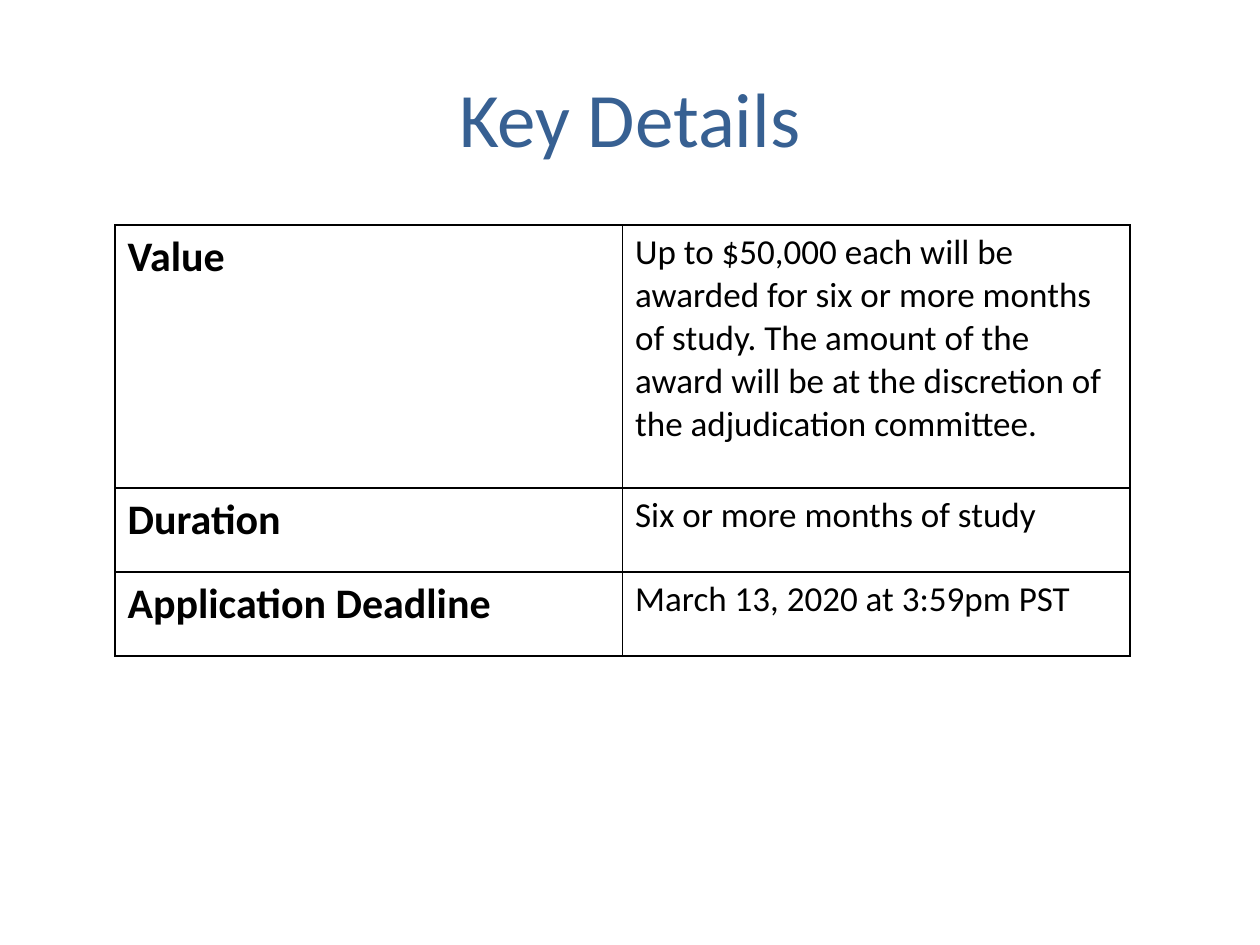
from lxml import etree
from pptx import Presentation
from pptx.dml.color import RGBColor
from pptx.enum.text import MSO_ANCHOR, PP_ALIGN
from pptx.oxml.ns import qn
from pptx.util import Cm, Pt

MIDDLE = MSO_ANCHOR.MIDDLE
CENTER = PP_ALIGN.CENTER
FONT = "Calibri"
COLORS = {"title": "376092", "text": "000000", "border": "000000", "cell": "FFFFFF"}
BLANK_LAYOUT = 6
COLUMN_WIDTH = Cm(10.23)
DETAILS = [
    ("Value",
     "Up to $50,000 each will be awarded for six or more months of study. "
     "The amount of the award will be at the discretion of the adjudication committee.",
     Cm(5.3)),
    ("Duration", "Six or more months of study", Cm(1.69)),
    ("Application Deadline", "March 13, 2020 at 3:59pm PST", Cm(1.69)),
]


def add_run(paragraph, text, size, color, bold=False):
    run = paragraph.add_run()
    run.text = text
    run.font.name = FONT
    run.font.size = Pt(size)
    run.font.bold = bold
    run.font.color.rgb = RGBColor.from_string(COLORS[color])


def add_title(slide, text):
    title = slide.shapes.add_textbox(Cm(1.27), Cm(0.76), Cm(22.86), Cm(3.18))
    frame = title.text_frame
    frame.word_wrap = True
    frame.vertical_anchor = MIDDLE
    heading = frame.paragraphs[0]
    heading.alignment = CENTER
    add_run(heading, text, 44, "title")


def add_borders(cell):
    """Draw a thin line on all four sides; lines must precede the fill."""
    properties = cell._tc.get_or_add_tcPr()
    for position, side in enumerate(("a:lnL", "a:lnR", "a:lnT", "a:lnB")):
        line = etree.Element(qn(side), w=str(Pt(1)))
        fill = etree.SubElement(line, qn("a:solidFill"))
        etree.SubElement(fill, qn("a:srgbClr"), val=COLORS["border"])
        properties.insert(position, line)


def fill_cell(cell, text, size, bold):
    cell.fill.solid()
    cell.fill.fore_color.rgb = RGBColor.from_string(COLORS["cell"])
    add_borders(cell)
    add_run(cell.text_frame.paragraphs[0], text, size, "text", bold)


def add_details(slide):
    height = sum(row_height for _, _, row_height in DETAILS)
    table = slide.shapes.add_table(
        len(DETAILS), 2, Cm(2.32), Cm(4.54), 2 * COLUMN_WIDTH, height).table
    table.first_row = False
    table.horz_banding = False
    for row, (label, detail, row_height) in zip(table.rows, DETAILS):
        row.height = row_height
        fill_cell(row.cells[0], label, 24, True)
        fill_cell(row.cells[1], detail, 20, False)


def main():
    presentation = Presentation()
    presentation.slide_width = Cm(25.4)
    presentation.slide_height = Cm(19.05)
    slide = presentation.slides.add_slide(presentation.slide_layouts[BLANK_LAYOUT])
    add_title(slide, "Key Details")
    add_details(slide)
    presentation.save("out.pptx")


if __name__ == "__main__":
    main()
